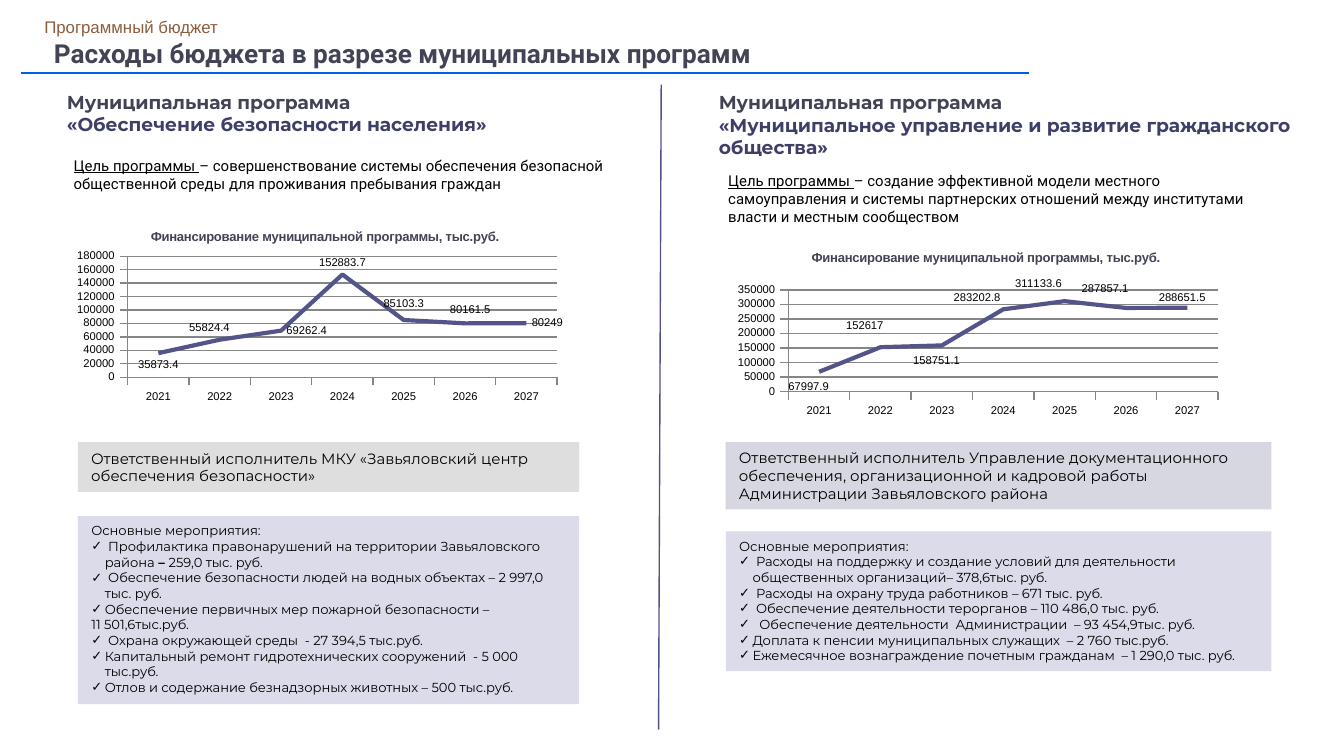
from lxml.etree import SubElement
from pptx import Presentation
from pptx.chart.data import CategoryChartData as Data
from pptx.dml.color import RGBColor
from pptx.enum.chart import XL_CHART_TYPE as Kind, XL_LABEL_POSITION as Spot
from pptx.enum.chart import XL_TICK_MARK as Tick
from pptx.enum.shapes import MSO_CONNECTOR as Link, MSO_SHAPE as Form
from pptx.enum.text import MSO_ANCHOR as Anchor, MSO_AUTO_SIZE as Fit, PP_ALIGN as Align
from pptx.oxml import parse_xml
from pptx.oxml.ns import nsdecls, qn
from pptx.util import Inches, Pt

WIDE = Inches(10)
HIGH = WIDE * 9 // 16
DARK, BLACK, LILAC = "424456", "000000", "DBDBE9"
UP, DOWN, RIGHT = Spot.ABOVE, Spot.BELOW, Spot.RIGHT

LEFT = {
    "name": ["Муниципальная программа", "«Обеспечение безопасности населения»"],
    "goal": "Цель программы |– совершенствование системы обеспечения безопасной "
            "общественной среды для проживания пребывания граждан",
    "owner": "Ответственный исполнитель МКУ «Завьяловский центр обеспечения безопасности»",
    "tasks": [
        "Основные мероприятия:",
        " Профилактика правонарушений на территории Завьяловского  района| – |259,0 тыс. руб.",
        " Обеспечение безопасности людей на водных объектах – 2 997,0 тыс. руб.",
        "Обеспечение первичных мер пожарной безопасности –",
        "11 501,6тыс.руб.",
        " Охрана окружающей среды  - 27 394,5 тыс.руб.",
        "Капитальный ремонт гидротехнических сооружений  - 5 000 тыс.руб.",
        "Отлов и содержание безнадзорных животных – 500 тыс.руб.",
    ],
    "plain": (0, 4),
    "sums": [35873.4, 55824.4, 69262.4, 152883.7, 85103.3, 80161.5, 80249],
    "marks": [(DOWN, 0, 0), (UP, -0.02, 0), (RIGHT, 0, 0), (UP, 0, 0),
              (UP, 0, -0.02), (UP, 0.01, -0.01), (RIGHT, 0, 0)],
    "scale": (180000, 20000),
    "head": (0.17, 0.08),
    "plot": (0.13, 0.22, 0.83, 0.57),
}
OTHER = {
    "name": ["Муниципальная программа",
             "«Муниципальное управление и развитие гражданского общества»"],
    "goal": "Цель программы |– создание эффективной модели местного самоуправления и системы "
            "партнерских отношений между институтами власти и местным сообществом",
    "owner": "Ответственный исполнитель Управление документационного обеспечения, "
             "организационной и кадровой работы Администрации Завьяловского района",
    "tasks": [
        "Основные мероприятия:",
        " Расходы на поддержку и создание условий для деятельности   "
        "общественных организаций– 378,6тыс. руб.",
        " Расходы на охрану труда работников – 671 тыс. руб.",
        " Обеспечение деятельности терорганов – 110 486,0 тыс. руб.",
        "  Обеспечение деятельности  Администрации  – 93 454,9тыс. руб.",
        "Доплата к пенсии муниципальных служащих  – 2 760 тыс.руб.",
        "Ежемесячное вознаграждение почетным гражданам  – 1 290,0 тыс. руб.",
    ],
    "plain": (0,),
    "sums": [67997.9, 152617, 158751.1, 283202.8, 311133.6, 287857.1, 288651.5],
    "marks": [(DOWN, -0.02, 0.02), (UP, -0.03, -0.05), (DOWN, -0.01, 0.02), (UP, -0.05, 0),
              (UP, -0.05, -0.03), (UP, -0.04, -0.04), (UP, -0.01, 0.01)],
    "scale": (350000, 50000),
    "head": (0.18, 0.1),
    "plot": (0.14, 0.32, 0.82, 0.53),
}


def tint(code):
    return RGBColor.from_string(code)


def box(x, y, w, h):
    return [round(n * side / 100) for n, side in zip((x, y, w, h), (WIDE, HIGH) * 2)]


def place(shape, area):
    shape.left, shape.top, shape.width, shape.height = box(*area)


def style(font, face, size, color, bold=False):
    font.name, font.size, font.bold = face, Pt(size), bold
    font.color.rgb = tint(color)


def write(frame, lines, face, size, color, bold=False):
    frame.word_wrap, frame.auto_size = True, Fit.NONE
    frame.text = "\n".join(lines)
    for para, line in zip(frame.paragraphs, lines):
        first, *rest = line.split("|")
        para.text = first
        for part in rest:
            para.add_run().text = part
        para.alignment = Align.LEFT
        para.space_before = Pt(0)
        for run in para.runs:
            style(run.font, face, size, color, bold)
    return frame.paragraphs


def inset(frame):
    frame.margin_left = frame.margin_right = Inches(0.07)
    frame.margin_top = frame.margin_bottom = Inches(0.04)


def label(slide, area, lines, *look):
    frame = slide.shapes.add_textbox(*box(*area)).text_frame
    return frame, write(frame, lines, *look)


def panel(slide, area, color):
    shape = slide.shapes.add_shape(Form.RECTANGLE, *box(*area))
    shape.shadow.inherit = False
    shape.fill.solid()
    shape.fill.fore_color.rgb = tint(color)
    shape.line.fill.background()
    return shape


def bullet(para, on):
    props = para._p.get_or_add_pPr()
    step = Inches(0.1) if on else 0
    props.set("marL", str(step))
    props.set("indent", str(-step))
    if on:
        SubElement(SubElement(props, qn("a:buClr")), qn("a:srgbClr"), val=BLACK)
        SubElement(props, qn("a:buChar"), char="✓")
    else:
        SubElement(props, qn("a:buNone"))


def tasks(body, area, lines, plain):
    place(body, area)
    body.fill.solid()
    body.fill.fore_color.rgb = tint(LILAC)
    paras = write(body.text_frame, lines, "Montserrat", 7, BLACK)
    for row, para in enumerate(paras):
        bullet(para, row not in plain)
    return paras


def layout(x, y, w=None, h=None, edge=True):
    head = '<c:layoutTarget val="inner"/>' if w else ""
    if edge:
        head += '<c:xMode val="edge"/><c:yMode val="edge"/>'
    pairs = zip("xywh", (x, y, w, h))
    tail = "".join(f'<c:{key} val="{val}"/>' for key, val in pairs if val is not None)
    return parse_xml(f'<c:layout {nsdecls("c")}><c:manualLayout>{head}{tail}'
                     '</c:manualLayout></c:layout>')


def settle(part, slot, *where):
    for old in part.findall(qn("c:layout")):
        part.remove(old)
    part.insert(slot, layout(*where))


def graph(slide, area, info):
    data = Data()
    data.categories = [str(year) for year in range(2021, 2028)]
    data.add_series("Series 1", info["sums"])
    chart = slide.shapes.add_chart(Kind.LINE, *box(*area), data).chart
    style(chart.font, "Arial", 6, BLACK)
    chart.has_legend = False
    chart.has_title = True
    title = chart.chart_title
    title.include_in_layout = False
    title.text_frame.text = "Финансирование муниципальной программы, тыс.руб."
    style(title.text_frame.paragraphs[0].runs[0].font, "Arial", 7, DARK, True)
    settle(title._element, 1, *info["head"])
    for axis in (chart.category_axis, chart.value_axis):
        axis.major_tick_mark, axis.minor_tick_mark = Tick.OUTSIDE, Tick.NONE
        axis.format.line.color.rgb = tint("868686")
        axis.format.line.width = Pt(0.75)
        style(axis.tick_labels.font, "Arial", 6, BLACK)
    axis = chart.value_axis
    axis.minimum_scale = 0
    axis.maximum_scale, axis.major_unit = info["scale"]
    axis.has_major_gridlines = True
    axis.major_gridlines.format.line.color.rgb = tint("868686")
    plot = chart.plots[0]
    plot.vary_by_categories = False
    line = plot.series[0]
    line.smooth = False
    line.format.line.color.rgb = tint("53548A")
    line.format.line.width = Pt(2.25)
    for spot, (side, x, y) in enumerate(info["marks"]):
        mark = line.points[spot].data_label
        style(mark.font, "Arial", 6, BLACK)
        mark.position = side
        if x or y:
            line._element.xpath("c:dLbls/c:dLbl")[spot].insert(1, layout(x, y, edge=False))
    for lead in line._element.xpath("c:dLbls/c:showLeaderLines"):
        lead.set("val", "0")
    settle(chart._chartSpace.chart.plotArea, 0, *info["plot"])


def column(slide, body, info, name, goal, chart, owner, shade, list_area):
    heads = label(slide, name, info["name"], "Montserrat", 10, DARK, True)[1]
    heads[1].runs[0].font.color.rgb = tint("3E3F68")
    goals = label(slide, goal, [info["goal"]], "Roboto", 8, BLACK)[1]
    goals[0].runs[0].font.underline = True
    graph(slide, chart, info)
    frame = panel(slide, owner, shade).text_frame
    frame.vertical_anchor = Anchor.MIDDLE
    write(frame, [info["owner"]], "Montserrat", 8, BLACK)
    return tasks(body, list_area, info["tasks"], info["plain"])


def main():
    deck = Presentation()
    deck.slide_width, deck.slide_height = WIDE, HIGH
    slide = deck.slides.add_slide(deck.slide_layouts[3])
    title, first, second = slide.placeholders
    place(title, (3.3, 4, 90, 6.58))
    inset(title.text_frame)
    title.text_frame.vertical_anchor = Anchor.MIDDLE
    write(title.text_frame, ["Расходы бюджета в разрезе муниципальных программ"],
          "Roboto", 14, DARK, True)[0].line_spacing = 0.9
    inset(label(slide, (2.6, 1.5, 19.6, 4.09), ["Программный бюджет"],
                "Arial", 9, "8B5D3D")[0])
    bar = panel(slide, (1.5, 9.4, 75.1, 0.5), "005EE4")
    bar.line.color.rgb = tint("FFFFFF")
    bar.line.width = Pt(0.75)
    rows = column(slide, first, LEFT, (4, 11.1, 46.5, 7.82), (4.5, 19.8, 41.8, 6.58),
                  (4.5, 27.73, 38.5, 28.09), (5.8, 58.49, 37.3, 6.58), "DEDEDE",
                  (5.8, 68.27, 37.3, 24.89))
    rows[1].runs[1].font.bold = True
    column(slide, second, OTHER, (52.5, 11.2, 44.9, 11.02), (53.2, 21.87, 42.2, 8.89),
           (53.2, 30.22, 39, 25.42), (54, 58.49, 40.6, 8.89), "D6D7E0",
           (54, 70.28, 40.6, 18.49))
    rule = slide.shapes.add_connector(Link.STRAIGHT, *box(49.2, 11.2, 49, 96.53))
    rule.line.color.rgb = tint("505188")
    rule.line.width = Pt(0.75)
    SubElement(rule._element.spPr, qn("a:effectLst"))
    deck.save("out.pptx")


if __name__ == "__main__":
    main()
